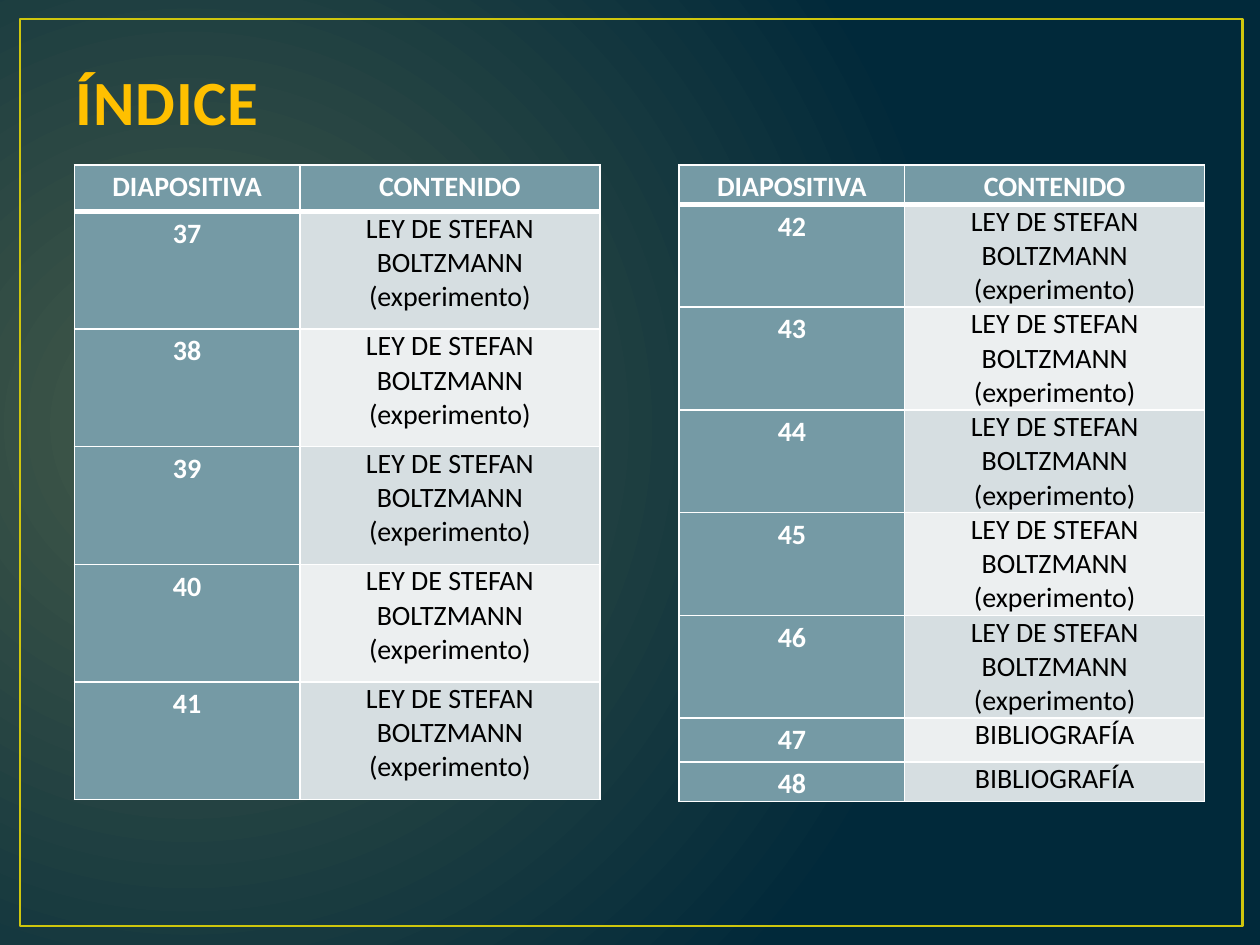
from dataclasses import dataclass

from lxml.etree import SubElement
from pptx import Presentation
from pptx.dml.color import RGBColor
from pptx.enum.shapes import MSO_SHAPE as Shape
from pptx.enum.text import MSO_ANCHOR as Anchor, MSO_AUTO_SIZE as AutoSize, PP_ALIGN as Align
from pptx.oxml import parse_xml
from pptx.oxml.ns import nsdecls, qn
from pptx.slide import Slide
from pptx.table import _Cell as Cell
from pptx.util import Pt

FONT = "Calibri"
WHITE, BLACK, TEAL = "FFFFFF", "000000", "759AA5"
BANDS = ("D6DEE1", "ECEFF0")
LAW = "LEY DE STEFAN BOLTZMANN\n(experimento)"
BIBLIOGRAPHY = "BIBLIOGRAFÍA"
COLUMN_WIDTHS = (128.9, 171.4)
TABLE_TOP = 94.3


@dataclass(frozen=True)
class Entry:
    number: int
    content: str
    height: float


@dataclass(frozen=True)
class IndexTable:
    left: float
    header_height: float
    entries: tuple[Entry, ...]


INDEX_TABLES = (
    IndexTable(388.1, 22.4, (
        *(Entry(number, LAW, 58.6) for number in range(42, 47)),
        Entry(47, BIBLIOGRAPHY, 25.2),
        Entry(48, BIBLIOGRAPHY, 22.4),
    )),
    IndexTable(42.5, 26.6, tuple(Entry(number, LAW, 67.2) for number in range(37, 42))),
)


def color(value: str) -> RGBColor:
    return RGBColor.from_string(value)


def line_xml(tag: str, value: str, width: float):
    return parse_xml(
        f'<a:{tag} {nsdecls("a")} w="{Pt(width)}"><a:solidFill>'
        f'<a:srgbClr val="{value}"/></a:solidFill></a:{tag}>'
    )


def paint_background(slide: Slide) -> None:
    fill = slide.background.fill
    fill.gradient()
    for stop, value in zip(fill.gradient_stops, ("445A49", "01293A")):
        stop.color.rgb = color(value)
    gradient = slide.element.find(".//" + qn("a:gradFill"))
    gradient.remove(gradient.find(qn("a:lin")))
    circle = SubElement(gradient, qn("a:path"), {"path": "circle"})
    SubElement(circle, qn("a:fillToRect"), {"l": "15000", "t": "50000", "r": "85000", "b": "60000"})


def draw_frame(slide: Slide) -> None:
    frame = slide.shapes.add_shape(Shape.RECTANGLE, Pt(11.5), Pt(10.8), Pt(698.4), Pt(518.4))
    frame.shadow.inherit = False
    frame.fill.background()
    frame.line.color.rgb = color("CFC60D")
    frame.line.width = Pt(1.5)


def draw_title(slide: Slide) -> None:
    title = slide.shapes.title
    title.left, title.top, title.width, title.height = Pt(36), Pt(21.6), Pt(648), Pt(61.2)
    box = title.text_frame
    box.text = "ÍNDICE"
    box.auto_size = AutoSize.NONE
    box.vertical_anchor = Anchor.BOTTOM
    para = box.paragraphs[0]
    para.alignment = Align.LEFT
    font = para.runs[0].font
    font.name, font.size, font.bold = FONT, Pt(36), True
    font.color.rgb = color("FFC000")
    properties = para.runs[0]._r.get_or_add_rPr()
    properties.set("spc", "50")
    properties.insert(0, line_xml("ln", "384F55", 1.05))


def format_cell(cell: Cell, text: str, fill: str, strong: bool, top: float, bottom: float) -> None:
    cell.fill.solid()
    cell.fill.fore_color.rgb = color(fill)
    cell.margin_left = cell.margin_right = Pt(5)
    cell.margin_top = cell.margin_bottom = Pt(0)
    cell.text_frame.text = text
    for para in cell.text_frame.paragraphs:
        para.alignment = Align.CENTER
        para.line_spacing = 1.15 if strong else 1.0
        for span in para.runs:
            span.font.name, span.font.size, span.font.bold = FONT, Pt(16), strong
            span.font.color.rgb = color(WHITE if strong else BLACK)
    borders = (("lnL", 1), ("lnR", 1), ("lnT", top), ("lnB", bottom))
    for place, (tag, width) in enumerate(borders):
        cell._tc.get_or_add_tcPr().insert(place, line_xml(tag, WHITE, width))


def draw_index(slide: Slide, index: IndexTable) -> None:
    heights = [index.header_height, *(entry.height for entry in index.entries)]
    table = slide.shapes.add_table(
        len(heights), len(COLUMN_WIDTHS), Pt(index.left), Pt(TABLE_TOP),
        Pt(sum(COLUMN_WIDTHS)), Pt(sum(heights)),
    ).table
    table.first_row = table.horz_banding = False
    for column, width in zip(table.columns, COLUMN_WIDTHS):
        column.width = Pt(width)
    for row, height in zip(table.rows, heights):
        row.height = Pt(height)
    for place, heading in enumerate(("DIAPOSITIVA", "CONTENIDO")):
        format_cell(table.cell(0, place), heading, TEAL, True, 1, 3)
    for place, entry in enumerate(index.entries):
        top = 3 if place == 0 else 1
        format_cell(table.cell(place + 1, 0), str(entry.number), TEAL, True, top, 1)
        format_cell(table.cell(place + 1, 1), entry.content, BANDS[place % 2], False, top, 1)


def main() -> None:
    """Build the index slide with its two tables."""
    deck = Presentation()
    deck.slide_width, deck.slide_height = Pt(720), Pt(540)
    page = deck.slides.add_slide(deck.slide_layouts[5])
    paint_background(page)
    draw_frame(page)
    draw_title(page)
    for index in INDEX_TABLES:
        draw_index(page, index)
    deck.save("out.pptx")


if __name__ == "__main__":
    main()
